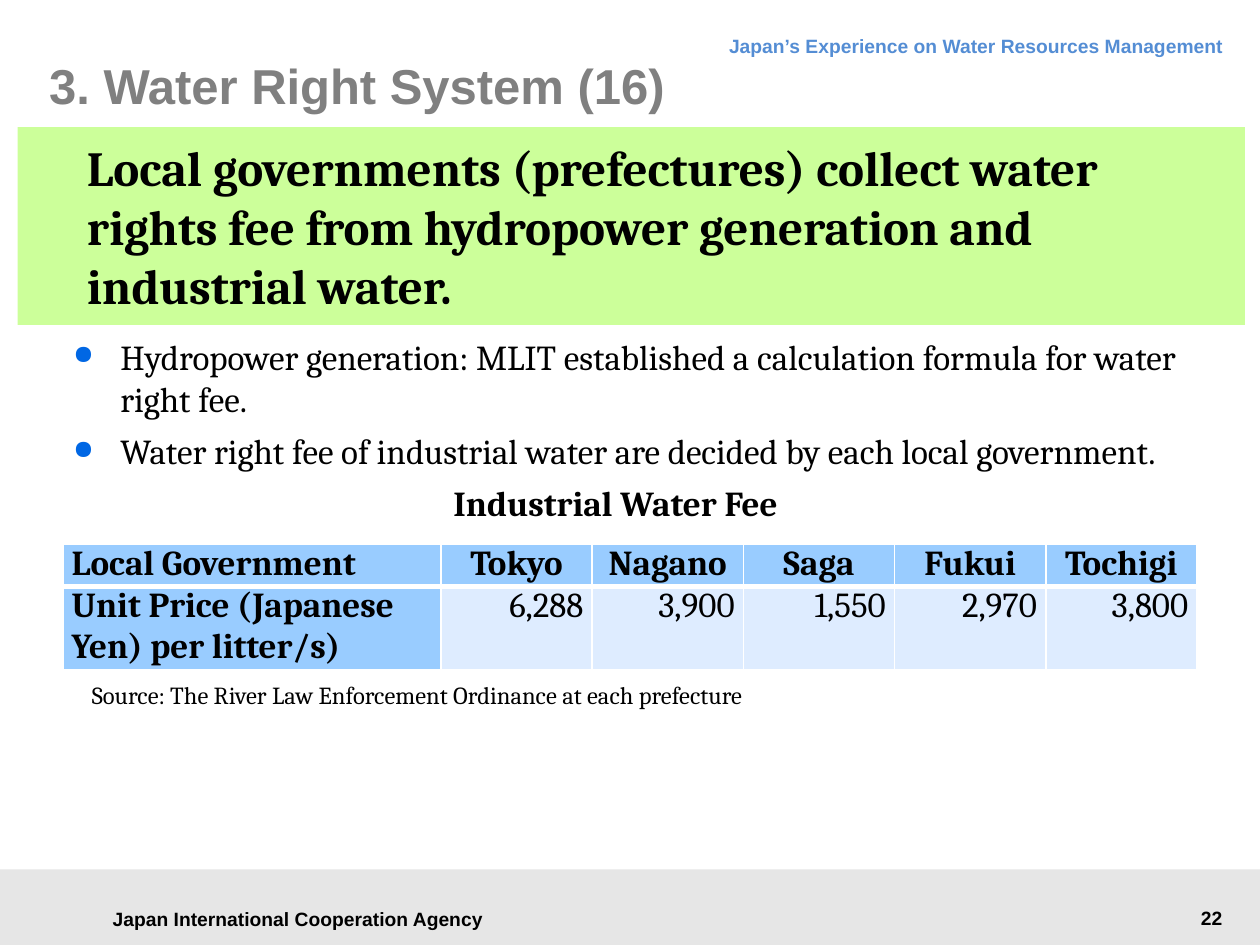
from dataclasses import dataclass

from lxml import etree
from pptx import Presentation
from pptx.dml.color import RGBColor
from pptx.enum.shapes import MSO_SHAPE
from pptx.enum.text import MSO_ANCHOR, PP_ALIGN
from pptx.oxml.ns import qn
from pptx.util import Pt

LEFT, CENTER, RIGHT = PP_ALIGN.LEFT, PP_ALIGN.CENTER, PP_ALIGN.RIGHT
TOP, MIDDLE = MSO_ANCHOR.TOP, MSO_ANCHOR.MIDDLE
RECTANGLE = MSO_SHAPE.RECTANGLE
TITLE_ONLY = 5

COLORS = {
    "text": "000000", "title": "808080", "header": "548DD4",
    "footer": "E6E6E6", "banner": "CCFF9A", "bullet": "0067E4",
    "label_cell": "99CCFF", "value_cell": "DEECFF", "border": "FFFFFF",
}
PRICES = {"Tokyo": "6,288", "Nagano": "3,900", "Saga": "1,550",
          "Fukui": "2,970", "Tochigi": "3,800"}


@dataclass
class Style:
    size: float
    font: str = "Cambria"
    bold: bool = False
    color: str = "text"
    align: int = LEFT


@dataclass
class Label:
    text: str
    frame: tuple
    style: Style
    anchor: int = TOP
    insets: tuple = (7.2, 3.6, 7.2, 3.6)
    line_spacing: float | None = None


FOOTER_STYLE = Style(11, "Arial", True)
LABELS = [
    Label("Japan International Cooperation Agency", (51.1, 512.6, 238.3, 24.5),
          Style(11, "Arial", True, align=CENTER), MIDDLE),
    Label("Japan’s Experience on Water Resources Management", (203, 11.5, 503.3, 27.4),
          Style(11, "Arial", True, "header", RIGHT), line_spacing=18),
    Label("22", (592.6, 514.1, 113, 20.9), Style(11, "Arial", True, align=RIGHT)),
    Label("Industrial Water Fee", (252, 271.4, 234.7, 31.7), Style(20, bold=True)),
    Label("Hydropower generation: MLIT established a calculation formula for water right fee.\n"
          "Water right fee of industrial water are decided by each local government.",
          (10.8, 185.8, 701.3, 90), Style(20), insets=(31, 5.8, 0, 5.8)),
    Label("Source: The River Law Enforcement Ordinance at each prefecture",
          (45.4, 385.2, 648, 24.5), Style(14)),
]
BANNER = Label("Local governments (prefectures) collect water rights fee from "
               "hydropower generation and industrial water.",
               (10.1, 72.7, 701.3, 113), Style(28, bold=True), insets=(35.3, 5.8, 25.2, 5.8))
TITLE = Label("3. Water Right System (16)", (28.1, 20.2, 648, 56.9),
              Style(28, "Arial", True, "title"), MIDDLE, (0, 0, 0, 0))


def rgb(name: str) -> RGBColor:
    return RGBColor.from_string(COLORS[name])


def points(values: tuple) -> list:
    return [Pt(value) for value in values]


def format_text(text_frame, style: Style) -> None:
    for para in text_frame.paragraphs:
        para.alignment = style.align
        for span in para.runs:
            span.font.size = Pt(style.size)
            span.font.name = style.font
            span.font.bold = style.bold
            span.font.color.rgb = rgb(style.color)


def fill_label(box, label: Label) -> None:
    frame = box.text_frame
    frame.text = label.text
    frame.word_wrap = True
    frame.vertical_anchor = label.anchor
    (frame.margin_left, frame.margin_top,
     frame.margin_right, frame.margin_bottom) = points(label.insets)
    format_text(frame, label.style)
    if label.line_spacing:
        frame.paragraphs[0].line_spacing = Pt(label.line_spacing)


def add_label(page, label: Label):
    box = page.shapes.add_textbox(*points(label.frame))
    fill_label(box, label)
    return box


def add_band(page, frame: tuple, color: str):
    band = page.shapes.add_shape(RECTANGLE, *points(frame))
    band.shadow.inherit = False
    band.fill.solid()
    band.fill.fore_color.rgb = rgb(color)
    band.line.fill.background()
    return band


def add_bullets(box) -> None:
    for para in box.text_frame.paragraphs:
        para.space_after = Pt(6)
        properties = para._p.get_or_add_pPr()
        properties.set("marL", str(Pt(27)))
        properties.set("indent", str(Pt(-27)))
        color = etree.SubElement(properties, qn("a:buClr"))
        etree.SubElement(color, qn("a:srgbClr"), val=COLORS["bullet"])
        etree.SubElement(properties, qn("a:buSzPct"), val="75000")
        etree.SubElement(properties, qn("a:buChar"), char="●")


def set_borders(cell, bottom: float) -> None:
    properties = cell._tc.get_or_add_tcPr()
    for side, width in (("L", 1), ("R", 1), ("T", 1), ("B", bottom)):
        line = etree.SubElement(properties, qn(f"a:ln{side}"), w=str(Pt(width)))
        fill = etree.SubElement(line, qn("a:solidFill"))
        etree.SubElement(fill, qn("a:srgbClr"), val=COLORS["border"])


def add_price_table(page) -> None:
    rows = [["Local Government", *PRICES],
            ["Unit Price (Japanese Yen) per litter/s)", *PRICES.values()]]
    table = page.shapes.add_table(2, len(rows[0]), *points((36, 311, 648, 72))).table
    for index, column in enumerate(table.columns):
        column.width = Pt(86.4 if index else 216)
    for row, height in zip(table.rows, (24, 48)):
        row.height = Pt(height)
    for i, texts in enumerate(rows):
        for j, text in enumerate(texts):
            is_value = i == 1 and j > 0
            align = LEFT if j == 0 else RIGHT if is_value else CENTER
            cell = table.cell(i, j)
            cell.text = text
            cell.margin_left = cell.margin_right = Pt(5)
            cell.margin_top = cell.margin_bottom = Pt(0)
            set_borders(cell, 1 if i else 3)
            cell.fill.solid()
            cell.fill.fore_color.rgb = rgb("value_cell" if is_value else "label_cell")
            format_text(cell.text_frame, Style(20, bold=not is_value, align=align))


def main() -> None:
    deck = Presentation()
    deck.slide_width, deck.slide_height = Pt(720), Pt(540)
    page = deck.slides.add_slide(deck.slide_layouts[TITLE_ONLY])

    title = page.shapes.title
    title.left, title.top, title.width, title.height = points(TITLE.frame)
    fill_label(title, TITLE)

    add_band(page, (0, 496.8, 720, 43.2), "footer")
    banner = add_band(page, BANNER.frame, "banner")
    fill_label(banner, BANNER)
    banner.text_frame.paragraphs[0]._p.get_or_add_pPr().set("marL", str(Pt(4.3)))

    add_price_table(page)
    for label in LABELS:
        box = add_label(page, label)
        if "\n" in label.text:
            add_bullets(box)
    deck.save("out.pptx")


if __name__ == "__main__":
    main()
